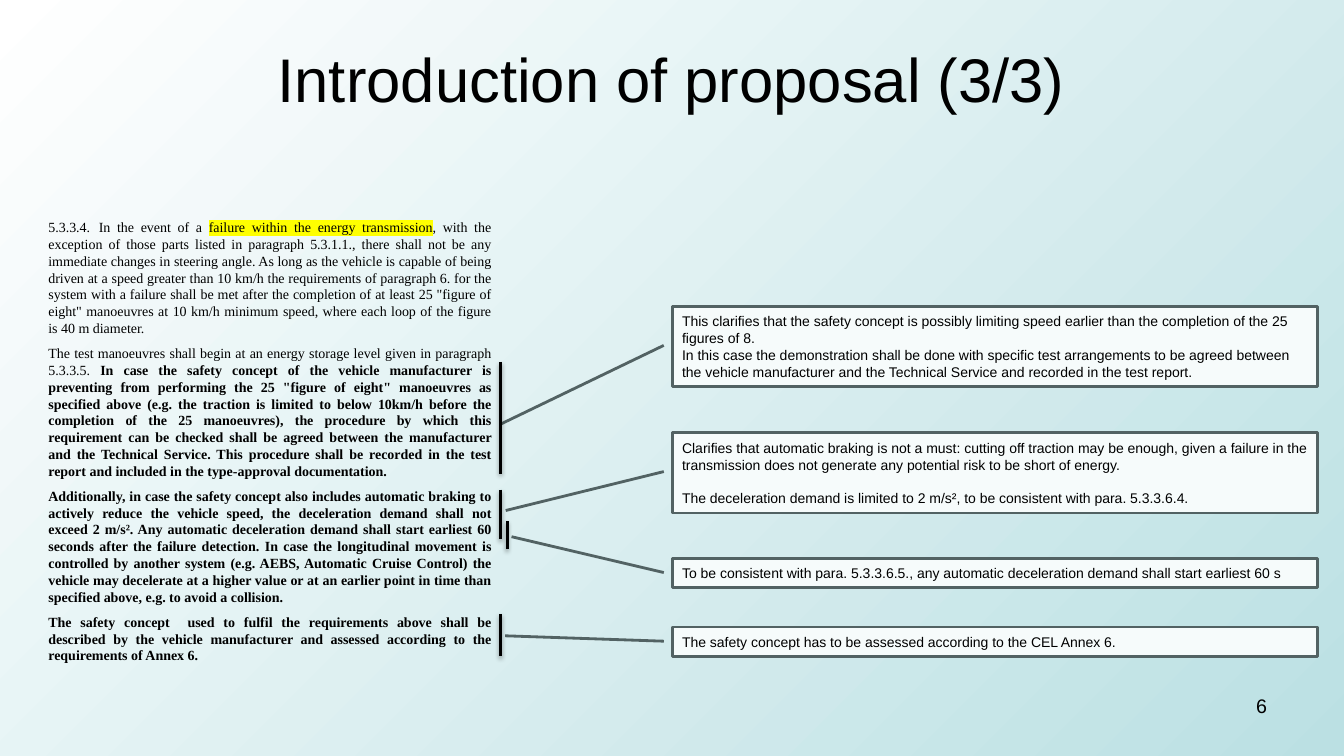
from lxml import etree
from pptx import Presentation
from pptx.dml.color import RGBColor
from pptx.enum.shapes import MSO_CONNECTOR, MSO_SHAPE
from pptx.enum.text import MSO_ANCHOR, PP_ALIGN
from pptx.oxml import parse_xml
from pptx.oxml.ns import qn
from pptx.util import Cm, Pt

STRAIGHT = MSO_CONNECTOR.STRAIGHT
CALLOUT = MSO_SHAPE.LINE_CALLOUT_1
TOP, MIDDLE = MSO_ANCHOR.TOP, MSO_ANCHOR.MIDDLE
LEFT, CENTER, RIGHT, JUSTIFY = PP_ALIGN.LEFT, PP_ALIGN.CENTER, PP_ALIGN.RIGHT, PP_ALIGN.JUSTIFY

BLACK = RGBColor(0x00, 0x00, 0x00)
WHITE = RGBColor(0xFF, 0xFF, 0xFF)
TEAL = RGBColor(0xBB, 0xE0, 0xE3)
PALE = RGBColor(0xF6, 0xFB, 0xFB)
SLATE = RGBColor(0x52, 0x62, 0x63)
YELLOW = RGBColor(0xFF, 0xFF, 0x00)

PLAIN, BOLD, MARKED = "plain", "bold", "marked"

REGULATION = [
    [
        ("5.3.3.4.\tIn the event of a ", PLAIN),
        ("failure within the energy transmission", MARKED),
        (", with the exception of those parts listed in paragraph 5.3.1.1., there shall not be any "
         "immediate changes in steering angle. As long as the vehicle is capable of being driven at a "
         "speed greater than 10 km/h the requirements of paragraph 6. for the system with a failure "
         "shall be met after the completion of at least 25 \"figure of eight\" manoeuvres at 10 km/h "
         "minimum speed, where each loop of the figure is 40 m diameter.", PLAIN),
    ],
    [
        ("The test manoeuvres shall begin at an energy storage level given in paragraph 5.3.3.5.", PLAIN),
        (" In case the safety concept of the vehicle manufacturer is preventing from performing the 25 "
         "\"figure of eight\" manoeuvres as specified above (e.g. the traction is limited to below 10km/h "
         "before the completion of the 25 manoeuvres), the procedure by which this requirement can be "
         "checked shall be agreed between the manufacturer and the Technical Service. This procedure "
         "shall be recorded in the test report and included in the type-approval documentation. ", BOLD),
    ],
    [
        ("Additionally, in case the safety concept also includes automatic braking to actively reduce the "
         "vehicle speed, the deceleration demand shall not exceed 2 m/s². Any automatic deceleration "
         "demand shall start earliest 60 seconds after the failure detection. In case the longitudinal "
         "movement is controlled by another system (e.g. AEBS, Automatic Cruise Control) the vehicle may "
         "decelerate at a higher value or at an earlier point in time than specified above, e.g. to avoid "
         "a collision.", BOLD),
    ],
    [
        ("The safety concept  used to fulfil the requirements above shall be described by the vehicle "
         "manufacturer and assessed according to the requirements of Annex 6.", BOLD),
    ],
]

COMMENTS = [
    (7.72, 2.03, (1.459, -0.265), 0, [
        "This clarifies that the safety concept is possibly limiting speed earlier than the completion "
        "of the 25 figures of 8.",
        "In this case the demonstration shall be done with specific test arrangements to be agreed "
        "between the vehicle manufacturer and the Technical Service and recorded in the test report."]),
    (10.9, 2.03, (0.968, -0.258), 11.5, [
        "Clarifies that automatic braking is not a must: cutting off traction may be enough, given a "
        "failure in the transmission does not generate any potential risk to be short of energy.",
        "The deceleration demand is limited to 2 m/s², to be consistent with para. 5.3.3.6.4."]),
    (14.07, 0.74, (-0.737, -0.249), 0, [
        "To be consistent with para. 5.3.3.6.5., any automatic deceleration demand shall start "
        "earliest 60 s"]),
    (15.8, 0.74, (0.301, -0.259), 0, [
        "The safety concept has to be assessed according to the CEL Annex 6."]),
]

CHANGE_BARS = [(12.62, 9.12, 11.94), (12.62, 12.34, 13.59), (12.78, 13.13, 13.84), (12.62, 15.47, 16.54)]

BAR_SHADOW = (
    '<a:effectLst xmlns:a="http://schemas.openxmlformats.org/drawingml/2006/main">'
    '<a:outerShdw blurRad="40000" dist="20000" dir="5400000" rotWithShape="0">'
    '<a:srgbClr val="000000"><a:alpha val="38000"/></a:srgbClr></a:outerShdw></a:effectLst>'
)


def style_paragraph(paragraph, size, align, family="Arial"):
    paragraph.alignment = align
    paragraph.font.size = Pt(size)
    paragraph.font.name = family
    paragraph.font.color.rgb = BLACK


def highlight(run):
    marker = etree.SubElement(run.font._element, qn("a:highlight"))
    etree.SubElement(marker, qn("a:srgbClr"), val=str(YELLOW))


def add_text_frame(slide, left, top, width, height):
    frame = slide.shapes.add_textbox(Cm(left), Cm(top), Cm(width), Cm(height)).text_frame
    frame.word_wrap = True
    frame.vertical_anchor = TOP
    return frame


def add_label(slide, text, box, size, align, inset=0.13):
    frame = add_text_frame(slide, *box)
    frame.margin_top = Cm(inset)
    frame.text = text
    style_paragraph(frame.paragraphs[0], size, align)


def add_regulation(slide):
    frame = add_text_frame(slide, 0.97, 5.39, 11.66, 11.58)
    for index, clause in enumerate(REGULATION):
        paragraph = frame.add_paragraph() if index else frame.paragraphs[0]
        paragraph.line_spacing = Pt(12)
        paragraph.space_after = Pt(6)
        style_paragraph(paragraph, 10, JUSTIFY, "Times New Roman")
        for text, look in clause:
            run = paragraph.add_run()
            run.text = text
            if look == BOLD:
                run.font.bold = True
            elif look == MARKED:
                highlight(run)


def add_comment(slide, top, height, pointer_end, gap, lines):
    callout = slide.shapes.add_shape(CALLOUT, Cm(16.94), Cm(top), Cm(16.26), Cm(height))
    for index, value in enumerate((0.485, -0.013, *pointer_end)):
        callout.adjustments[index] = value
    callout.shadow.inherit = False
    callout.fill.solid()
    callout.fill.fore_color.rgb = PALE
    callout.line.color.rgb = SLATE
    callout.line.width = Pt(2)
    frame = callout.text_frame
    frame.word_wrap = True
    frame.vertical_anchor = MIDDLE
    frame.text = "\n".join(lines)
    for index, paragraph in enumerate(frame.paragraphs):
        if index:
            paragraph.space_before = Pt(gap)
        style_paragraph(paragraph, 10, LEFT)


def add_change_bar(slide, x, top, bottom):
    bar = slide.shapes.add_connector(STRAIGHT, Cm(x), Cm(top), Cm(x), Cm(bottom))
    bar.line.color.rgb = BLACK
    bar.line.width = Pt(2)
    bar._element.spPr.append(parse_xml(BAR_SHADOW))


def paint_background(slide):
    fill = slide.background.fill
    fill.gradient()
    fill.gradient_angle = 315
    for stop, color, position in zip(fill.gradient_stops, (WHITE, TEAL), (0, 1)):
        stop.color.rgb = color
        stop.position = position


def main():
    deck = Presentation()
    deck.slide_width, deck.slide_height = Cm(33.87), Cm(19.05)
    slide = deck.slides.add_slide(deck.slide_layouts[6])
    paint_background(slide)
    add_label(slide, "Introduction of proposal (3/3)", (1.69, 0.76, 30.48, 3.18), 44, CENTER, 0.28)
    add_label(slide, "6", (24.28, 17.35, 7.9, 1.32), 14, RIGHT)
    add_regulation(slide)
    for comment in COMMENTS:
        add_comment(slide, *comment)
    for bar in CHANGE_BARS:
        add_change_bar(slide, *bar)
    deck.save("out.pptx")


if __name__ == "__main__":
    main()
